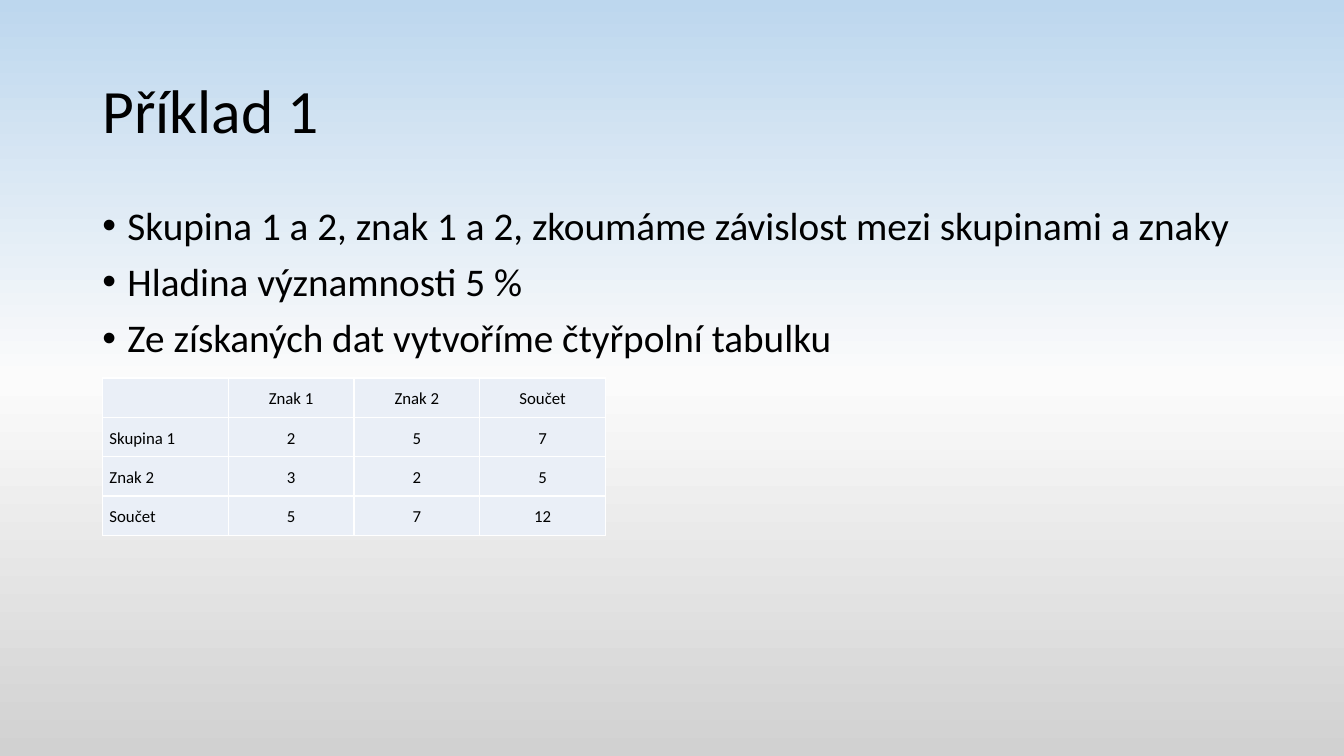
from lxml.etree import SubElement
from pptx import Presentation
from pptx.dml.color import RGBColor
from pptx.enum.text import MSO_ANCHOR as Anchor, PP_ALIGN as Align
from pptx.oxml.ns import qn
from pptx.util import Pt

# Content
TITLE = "Příklad 1"
BULLETS = [
    "Skupina 1 a 2, znak 1 a 2, zkoumáme závislost mezi skupinami a znaky",
    "Hladina významnosti 5 %",
    "Ze získaných dat vytvoříme čtyřpolní tabulku",
]
CONTINGENCY = [
    ["", "Znak 1", "Znak 2", "Součet"],
    ["Skupina 1", "2", "5", "7"],
    ["Znak 2", "3", "2", "5"],
    ["Součet", "5", "7", "12"],
]

THEME = {
    "font": "Calibri",
    "text": "000000",
    "cell": "EAEFF7",
    "border": "FFFFFF",
    "background": [(0, "BDD7EE"), (50, "FBFBFB"), (100, "D1D1D1")],
    "title_size": 44,
    "body_size": 28,
    "table_size": 12,
}

# Layout in points
SLIDE_WIDTH, SLIDE_HEIGHT = 960, 540
MARGIN, TEXT_WIDTH = 66, 828
TITLE_TOP, TITLE_HEIGHT = 28.75, 104.4
BODY_TOP, BODY_HEIGHT = 143.75, 342.6
TABLE_LEFT, TABLE_TOP = 73.2, 270
COLUMN_WIDTH, ROW_HEIGHT = 89.85, 28.1
CELL_SIDE, CELL_EDGE = 5, 5.7
BULLET_INDENT = 18


def add_run(paragraph, text, size):
    run = paragraph.add_run()
    run.text = text
    run.font.name = THEME["font"]
    run.font.size = Pt(size)
    run.font.color.rgb = RGBColor.from_string(THEME["text"])


def add_color(parent, color):
    SubElement(parent, qn("a:srgbClr"), val=color)


def paint_background(slide):
    fill = slide.background.fill
    fill.gradient()
    fill.gradient_angle = 270
    stops = next(slide.element.iter(qn("a:gsLst")))
    for stop in list(stops):
        stops.remove(stop)
    for percent, color in THEME["background"]:
        add_color(SubElement(stops, qn("a:gs"), pos=str(percent * 1000)), color)


def add_text_frame(slide, top, height, anchor):
    box = slide.shapes.add_textbox(Pt(MARGIN), Pt(top), Pt(TEXT_WIDTH), Pt(height))
    box.text_frame.word_wrap = True
    box.text_frame.vertical_anchor = anchor
    return box.text_frame


def add_title(slide):
    paragraph = add_text_frame(slide, TITLE_TOP, TITLE_HEIGHT, Anchor.MIDDLE).paragraphs[0]
    paragraph.line_spacing = 0.9
    add_run(paragraph, TITLE, THEME["title_size"])


def add_bullets(slide):
    frame = add_text_frame(slide, BODY_TOP, BODY_HEIGHT, Anchor.TOP)
    for index, text in enumerate(BULLETS):
        paragraph = frame.add_paragraph() if index else frame.paragraphs[0]
        paragraph.line_spacing = 0.9
        paragraph.space_before = Pt(10)
        properties = paragraph._p.get_or_add_pPr()
        properties.set("marL", str(Pt(BULLET_INDENT)))
        properties.set("indent", str(-Pt(BULLET_INDENT)))
        SubElement(properties, qn("a:buFont"), typeface="Arial")
        SubElement(properties, qn("a:buChar"), char="•")
        add_run(paragraph, text, THEME["body_size"])


def style_cell(cell):
    cell.margin_left = cell.margin_right = Pt(CELL_SIDE)
    cell.margin_top = cell.margin_bottom = Pt(CELL_EDGE)
    cell.vertical_anchor = Anchor.MIDDLE
    # Borders come before the fill in the cell properties
    properties = cell._tc.get_or_add_tcPr()
    for side in ("lnL", "lnR", "lnT", "lnB"):
        line = SubElement(properties, qn(f"a:{side}"), w=str(Pt(1)))
        add_color(SubElement(line, qn("a:solidFill")), THEME["border"])
    cell.fill.solid()
    cell.fill.fore_color.rgb = RGBColor.from_string(THEME["cell"])


def add_contingency_table(slide):
    rows, columns = len(CONTINGENCY), len(CONTINGENCY[0])
    table = slide.shapes.add_table(
        rows, columns, Pt(TABLE_LEFT), Pt(TABLE_TOP),
        Pt(columns * COLUMN_WIDTH), Pt(rows * ROW_HEIGHT),
    ).table
    table.first_row = table.horz_banding = False
    for row, texts in enumerate(CONTINGENCY):
        for column, text in enumerate(texts):
            cell = table.cell(row, column)
            style_cell(cell)
            paragraph = cell.text_frame.paragraphs[0]
            paragraph.alignment = Align.CENTER if column else Align.JUSTIFY
            paragraph.line_spacing = 1.15
            if text:
                add_run(paragraph, text, THEME["table_size"])
            else:
                # Keep the empty cell from stretching its row
                SubElement(paragraph._p, qn("a:endParaRPr"), sz=str(THEME["table_size"] * 100))


def main():
    presentation = Presentation()
    presentation.slide_width, presentation.slide_height = Pt(SLIDE_WIDTH), Pt(SLIDE_HEIGHT)
    slide = presentation.slides.add_slide(presentation.slide_layouts[6])
    paint_background(slide)
    add_title(slide)
    add_bullets(slide)
    add_contingency_table(slide)
    presentation.save("out.pptx")


if __name__ == "__main__":
    main()
